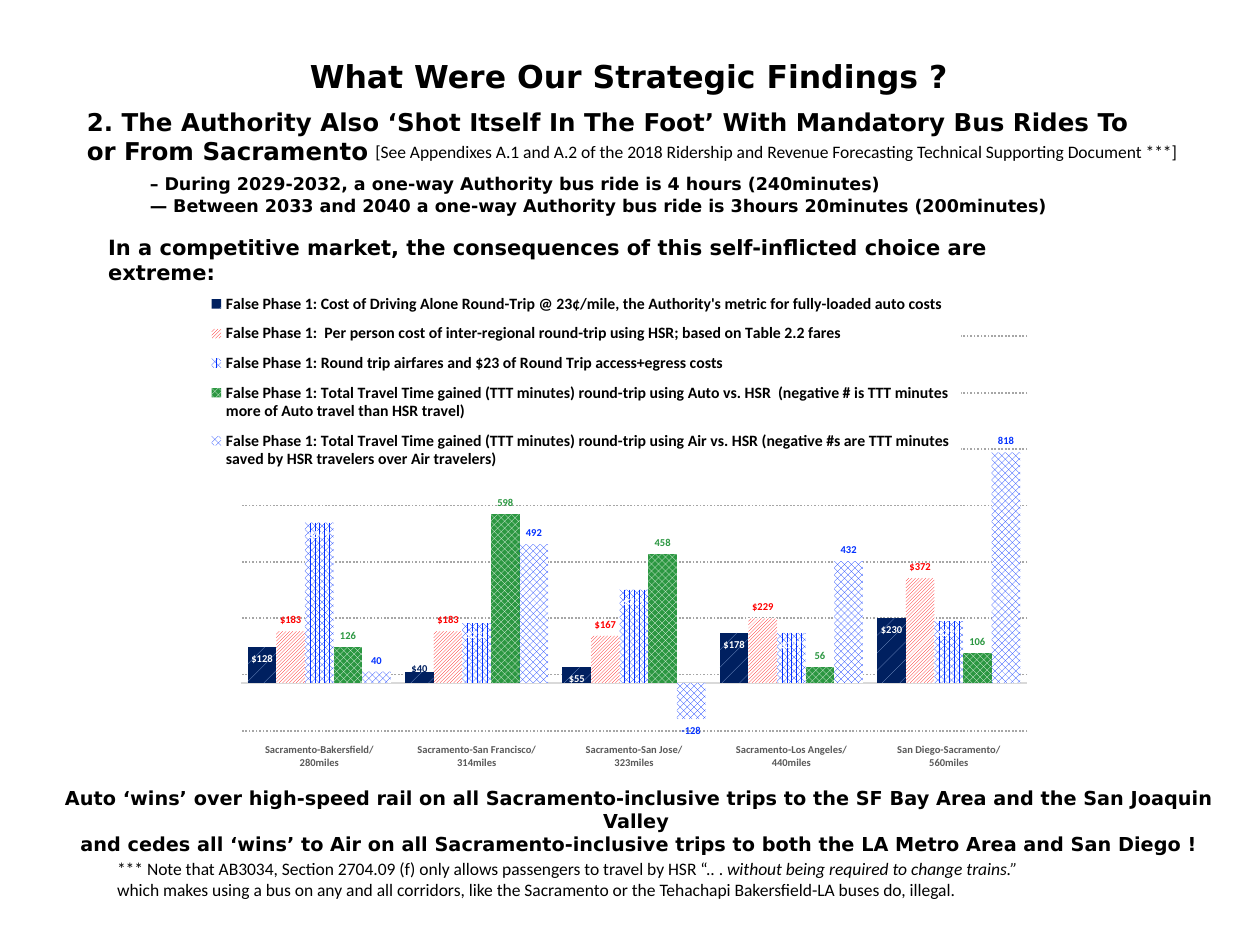
from dataclasses import dataclass

from lxml import etree
from pptx import Presentation
from pptx import util as u
from pptx.chart import data as chart_data
from pptx.dml.color import RGBColor
from pptx.enum import chart as charts, dml, text

CHART_NS = "http://schemas.openxmlformats.org/drawingml/2006/chart"
DRAWING_NS = "http://schemas.openxmlformats.org/drawingml/2006/main"
DOLLARS, MINUTES = '"$"#,##0', "#,##0"
INSIDE = charts.XL_LABEL_POSITION.INSIDE_END
OUTSIDE = charts.XL_LABEL_POSITION.OUTSIDE_END
PATTERN = dml.MSO_PATTERN


@dataclass(frozen=True)
class Theme:
    """Colours, fonts and type sizes of the page."""
    ink: str = "000000"
    white: str = "FFFFFF"
    navy: str = "002060"
    sky: str = "8FAADC"
    red: str = "FF0000"
    blue: str = "0432FF"
    green: str = "2B9741"
    grid: str = "A6A6A6"
    axis: str = "D9D9D9"
    axis_text: str = "595959"
    heading: str = "DejaVu Sans"
    body: str = "Calibri"
    title: int = 18
    finding: int = 14
    lead: int = 12
    verdict: int = 11
    note: int = 10
    legend: int = 9
    label: int = 6


THEME = Theme()

ROUTES = [
    "Sacramento-Bakersfield/\n280miles",
    "Sacramento-San Francisco/\n314miles",
    "Sacramento-San Jose/\n323miles",
    "Sacramento-Los Angeles/\n440miles",
    "San Diego-Sacramento/\n560miles",
]

MEASURES = [
    ("False Phase 1: Cost of Driving Alone Round-Trip @ 23¢/mile, the Authority's metric "
     "for fully-loaded auto costs", (128, 40, 55, 178, 230),
     PATTERN.PERCENT_5, THEME.sky, THEME.navy, THEME.white, INSIDE, DOLLARS),
    ("False Phase 1:  Per person cost of inter-regional round-trip using HSR; "
     "based on Table 2.2 fares", (183, 183, 167, 229, 372),
     PATTERN.DARK_UPWARD_DIAGONAL, THEME.red, THEME.white, THEME.red, OUTSIDE, DOLLARS),
    ("False Phase 1: Round trip airfares and $23 of Round Trip access+egress costs",
     (569, 212, 331, 177, 219),
     PATTERN.PERCENT_75, THEME.blue, THEME.white, THEME.white, INSIDE, DOLLARS),
    ("False Phase 1: Total Travel Time gained (TTT minutes) round-trip using Auto vs. HSR  "
     "(negative # is TTT minutes more of Auto travel than HSR travel)",
     (126, 598, 458, 56, 106),
     PATTERN.OUTLINED_DIAMOND, THEME.white, THEME.green, THEME.green, OUTSIDE, MINUTES),
    ("False Phase 1: Total Travel Time gained (TTT minutes) round-trip using Air vs. HSR "
     "(negative #s are TTT minutes saved by HSR travelers over Air travelers)",
     (40, 492, -128, 432, 818),
     PATTERN.LARGE_CHECKER_BOARD, THEME.blue, THEME.white, THEME.blue, OUTSIDE, MINUTES),
]


def style(font, size, colour=THEME.ink, face=THEME.body, bold=False):
    """Set the face, size, colour and weight of a font."""
    font.name, font.size, font.bold = face, u.Pt(size), bold
    font.color.rgb = RGBColor.from_string(colour)


def add_text(page, frame, paragraphs, face, bold, wrap=True, align=None):
    """Add a text box whose paragraphs are lists of (words, size, italic) spans."""
    box = page.shapes.add_textbox(*map(u.Pt, frame))
    body = box.text_frame
    body.word_wrap = wrap
    body.auto_size = text.MSO_AUTO_SIZE.SHAPE_TO_FIT_TEXT
    for number, spans in enumerate(paragraphs):
        para = body.add_paragraph() if number else body.paragraphs[0]
        para.alignment = align
        for words, size, italic in spans:
            span = para.add_run()
            span.text = words
            style(span.font, size, face=face, bold=bold)
            span.font.italic = italic


def place(parent, index, **measures):
    """Give a chart part a manual layout at the given child index."""
    for old in parent.findall(f"{{{CHART_NS}}}layout"):
        parent.remove(old)
    layout = etree.Element(f"{{{CHART_NS}}}layout")
    manual = etree.SubElement(layout, f"{{{CHART_NS}}}manualLayout")
    for tag, value in measures.items():
        etree.SubElement(manual, f"{{{CHART_NS}}}{tag}").set("val", str(value))
    parent.insert(index, layout)


def style_series(series, measure):
    """Apply the pattern fill and value labels of one measure."""
    _, _, pattern, front, back, label_colour, position, number_format = measure
    fill = series.format.fill
    fill.patterned()
    fill.pattern = pattern
    fill.fore_color.rgb = RGBColor.from_string(front)
    fill.back_color.rgb = RGBColor.from_string(back)
    series.invert_if_negative = False
    labels = series.data_labels
    labels.show_value = True
    labels.position = position
    labels.number_format, labels.number_format_is_linked = number_format, False
    style(labels.font, THEME.label, label_colour, bold=True)


def raise_label(series, index, colour, rise):
    """Recolour one value label and move it up by a share of the chart height."""
    label = series.points[index].data_label
    style(label.font, THEME.label, colour, bold=True)
    label.position = INSIDE
    place(series.data_labels._element[0], 1, x=0, y=-rise)


def style_axes(chart):
    """Set the route axis, the hidden value axis and its dotted grid."""
    routes, values = chart.category_axis, chart.value_axis
    routes.tick_label_position = charts.XL_TICK_LABEL_POSITION.LOW
    routes.major_tick_mark = charts.XL_TICK_MARK.NONE
    style(routes.tick_labels.font, THEME.label, THEME.axis_text, bold=True)
    values.visible = False
    values.minimum_scale, values.maximum_scale, values.major_unit = -170, 1400, 200
    values.has_major_gridlines = True
    grid = values.major_gridlines.format.line
    for line, colour, width in ((routes.format.line, THEME.axis, 0.75), (grid, THEME.grid, 1)):
        line.color.rgb = RGBColor.from_string(colour)
        line.width = u.Pt(width)
    grid.dash_style = dml.MSO_LINE.ROUND_DOT


def add_legend(chart):
    """Add the legend on a solid ground that hides the grid behind its words."""
    chart.has_legend = True
    legend = chart.legend
    legend.position = charts.XL_LEGEND_POSITION.BOTTOM
    legend.include_in_layout = False
    style(legend.font, THEME.legend, bold=True)
    place(legend._element, 1, xMode="edge", yMode="edge", x=0, y=0.03, w=0.92, h=0.39)
    ground = etree.Element(f"{{{CHART_NS}}}spPr")
    fill = etree.SubElement(ground, f"{{{DRAWING_NS}}}solidFill")
    etree.SubElement(fill, f"{{{DRAWING_NS}}}srgbClr").set("val", THEME.white)
    legend._element.find(f"{{{CHART_NS}}}txPr").addprevious(ground)


def add_trip_chart(page, frame):
    """Add the column chart of trip costs and time gains."""
    trips = chart_data.CategoryChartData()
    trips.categories = ROUTES
    for measure in MEASURES:
        trips.add_series(measure[0], measure[1], number_format=measure[-1])
    chart = page.shapes.add_chart(
        charts.XL_CHART_TYPE.COLUMN_CLUSTERED, *map(u.Pt, frame), trips).chart
    style(chart.font, THEME.note)
    chart.has_title = False
    plot = chart.plots[0]
    plot.gap_width, plot.overlap, plot.vary_by_categories = 50, 0, False
    for series, measure in zip(plot.series, MEASURES):
        style_series(series, measure)
    raise_label(plot.series[0], 1, THEME.navy, 0.03)
    style_axes(chart)
    add_legend(chart)
    place(chart._chartSpace.chart.plotArea, 0, layoutTarget="inner",
          xMode="edge", yMode="edge", x=0.05, y=0.04, w=0.95, h=0.88)


def main():
    """Build the findings page and save the deck."""
    deck = Presentation()
    deck.slide_width, deck.slide_height = u.Pt(720), u.Pt(540)
    page = deck.slides.add_slide(deck.slide_layouts[6])
    add_text(page, (42.5, 57.6, 617.8, 72.7), [
        [("2. The Authority Also ‘Shot Itself In The Foot’ With Mandatory Bus Rides "
          "To or From Sacramento", THEME.finding, False)],
        [("\t", THEME.finding, False),
         ("– During 2029-2032, a one-way Authority bus ride is 4 hours (240minutes)",
          THEME.note, False)],
        [("\t— Between 2033 and 2040 a one-way Authority bus ride is 3hours 20minutes "
          "(200minutes)", THEME.note, False)],
    ], THEME.heading, True)
    add_text(page, (170, 28.8, 381, 28.8),
             [[("What Were Our Strategic Findings ?", THEME.title, False)]],
             THEME.heading, True, wrap=False)
    add_text(page, (207.4, 77, 486, 19.4),
             [[("[See Appendixes A.1 and A.2 of the 2018 Ridership and Revenue Forecasting "
                "Technical Supporting Document ***]", THEME.note, False)]],
             THEME.body, False, wrap=False)
    add_text(page, (54.7, 130.3, 581.8, 21.6),
             [[("In a competitive market, the consequences of this self-inflicted choice "
                "are extreme:", THEME.lead, False)]], THEME.heading, True)
    add_trip_chart(page, (113.8, 153.4, 473.8, 287.3))
    add_text(page, (10.8, 445.7, 709.2, 33.8), [
        [("Auto ‘wins’ over high-speed rail on all Sacramento-inclusive trips to the SF Bay "
          "Area and the San Joaquin Valley ", THEME.verdict, False)],
        [("and cedes all ‘wins’ to Air on all Sacramento-inclusive trips to both the LA Metro "
          "Area and San Diego !", THEME.verdict, False)],
    ], THEME.heading, True, align=text.PP_ALIGN.CENTER)
    add_text(page, (59.8, 486.7, 540.7, 31.7), [
        [("*** Note that AB3034, Section 2704.09 (f) only allows passengers to travel by HSR "
          "“.. . ", THEME.note, False),
         ("without being required to change trains.”", THEME.note, True)],
        [("which makes using a bus on any and all corridors, like the Sacramento or the "
          "Tehachapi Bakersfield-LA buses do, illegal.", THEME.note, False)],
    ], THEME.body, False, wrap=False)
    deck.save("out.pptx")


if __name__ == "__main__":
    main()
